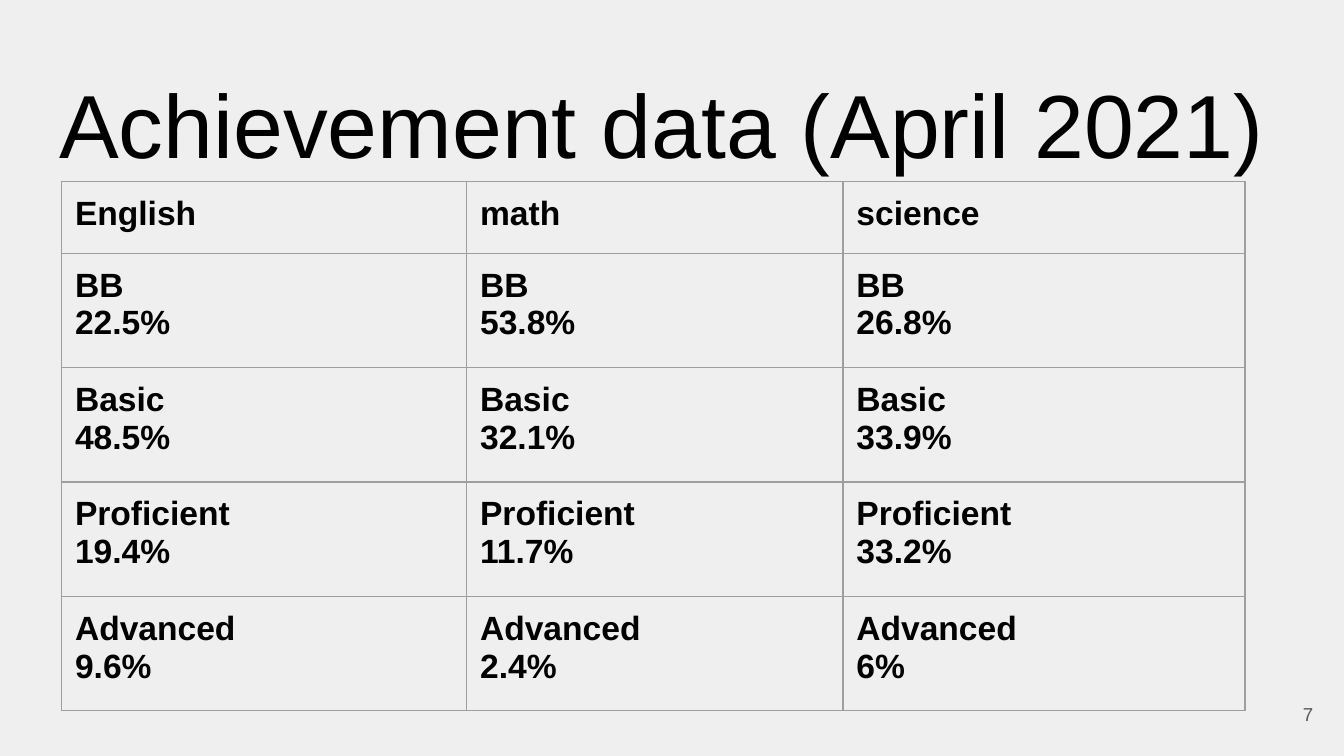
from pptx import Presentation
from pptx.dml.color import RGBColor
from pptx.enum import text as tx
from pptx.oxml import parse_xml
from pptx.oxml.ns import nsdecls
from pptx.util import Pt

BLACK = RGBColor(0x00, 0x00, 0x00)
GRAY = RGBColor(0x59, 0x59, 0x59)
RULE = RGBColor(0x9E, 0x9E, 0x9E)
PAPER = RGBColor(0xEF, 0xEF, 0xEF)
PAD = Pt(7.2)


def write(frame, words, size, color=BLACK, bold=False, align=tx.PP_ALIGN.LEFT):
    """Fill a text frame, one paragraph for each line of words."""
    frame.text = words
    for para in frame.paragraphs:
        para.alignment = align
        font = para.runs[0].font
        font.name, font.size, font.bold = "Arial", Pt(size), bold
        font.color.rgb = color


def border(cell):
    props = cell._tc.get_or_add_tcPr()
    for i, side in enumerate(("lnL", "lnR", "lnT", "lnB")):
        line = parse_xml(
            f'<a:{side} {nsdecls("a")} w="{Pt(0.75)}"><a:solidFill>'
            f'<a:srgbClr val="{RULE}"/></a:solidFill></a:{side}>')
        props.insert(i, line)


deck = Presentation()
deck.slide_width, deck.slide_height = Pt(720), Pt(405)
slide = deck.slides.add_slide(deck.slide_layouts[5])
slide.background.fill.solid()
slide.background.fill.fore_color.rgb = PAPER

# Title, high enough for its descenders to clear the table
title = slide.shapes.title
title.left, title.top, title.width, title.height = Pt(24.5), Pt(30), Pt(671), Pt(55.5)
frame = title.text_frame
frame.word_wrap = True
frame.auto_size = tx.MSO_AUTO_SIZE.NONE
frame.vertical_anchor = tx.MSO_ANCHOR.TOP
frame.margin_left = frame.margin_right = frame.margin_top = frame.margin_bottom = PAD
write(frame, "Achievement data (April 2021)", 48)

# Scores by subject
subjects = ["English", "math", "science"]
scores = {
    "BB": ["22.5%", "53.8%", "26.8%"],
    "Basic": ["48.5%", "32.1%", "33.9%"],
    "Proficient": ["19.4%", "11.7%", "33.2%"],
    "Advanced": ["9.6%", "2.4%", "6%"],
}
rows = [subjects] + [[f"{level}\n{score}" for score in line]
                     for level, line in scores.items()]
widths = [217, 201.6, 215.4]
heights = [38.4] + [61.3] * len(scores)

table = slide.shapes.add_table(len(rows), len(subjects), Pt(33), Pt(97.3),
                               Pt(sum(widths)), Pt(sum(heights))).table
table.first_row = table.horz_banding = False
for col, wide in zip(table.columns, widths):
    col.width = Pt(wide)
for r, (row, high) in enumerate(zip(rows, heights)):
    table.rows[r].height = Pt(high)
    for c, words in enumerate(row):
        cell = table.cell(r, c)
        cell.margin_left = cell.margin_right = PAD
        cell.margin_top = cell.margin_bottom = PAD
        cell.fill.background()
        border(cell)
        write(cell.text_frame, words, 18, bold=True)

# Page number
page = slide.shapes.add_textbox(Pt(667.4), Pt(367.2), Pt(43.2), Pt(31)).text_frame
page.word_wrap = True
page.vertical_anchor = tx.MSO_ANCHOR.MIDDLE
page.margin_left = page.margin_right = page.margin_top = page.margin_bottom = PAD
write(page, "7", 10, color=GRAY, align=tx.PP_ALIGN.RIGHT)

deck.save("out.pptx")
